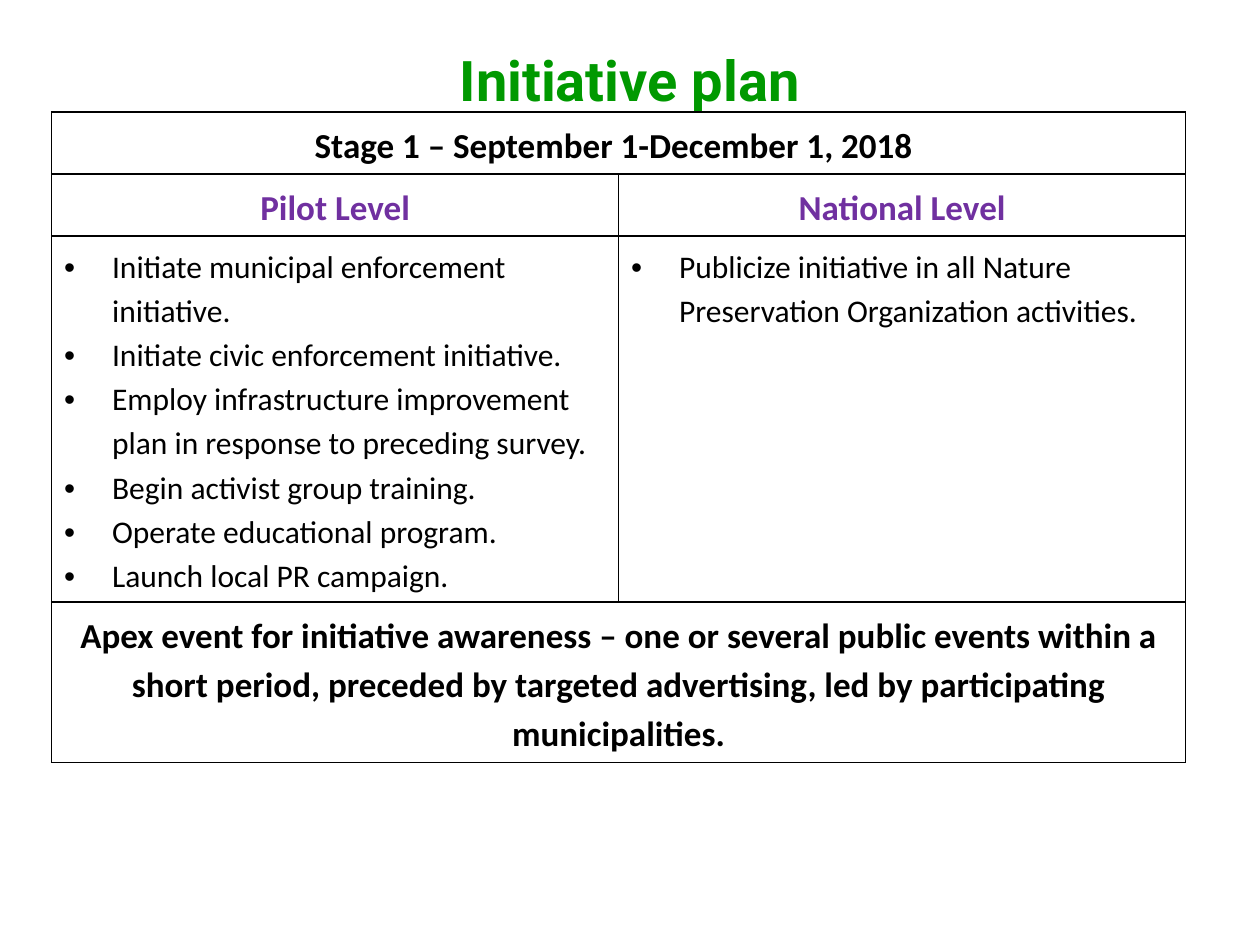
from lxml import etree
from pptx import Presentation
from pptx.dml.color import RGBColor
from pptx.enum import text
from pptx.oxml import ns
from pptx.util import Inches, Pt

COLORS = {"title": "009900", "level": "7030A0", "body": "000000", "border": "000000"}
TITLE = "Initiative plan"
STAGE = " Stage 1 – September 1-December 1, 2018"
LEVELS = ["Pilot Level", "National Level"]
ACTIONS = [
    [
        "Initiate municipal enforcement initiative.",
        "Initiate civic enforcement initiative.",
        "Employ infrastructure improvement plan in response to preceding survey.",
        "Begin activist group training.",
        "Operate educational program.",
        "Launch local PR campaign.",
    ],
    ["Publicize initiative in all Nature Preservation Organization activities."],
]
APEX = (
    "Apex event for initiative awareness – one or several public events within a "
    "short period, preceded by targeted advertising, led by participating municipalities."
)
ROW_HEIGHTS = [0.49, 0.49, 2.9, 1.27]
COLUMN_WIDTH = 4.5
INDENT = 0.38


def add_child(parent, tag, **attributes):
    child = etree.SubElement(parent, ns.qn(tag))
    for name, value in attributes.items():
        child.set(name, str(value))
    return child


def write(frame, lines, size=20, font="Calibri", color="body", bold=True,
          bullet=False, rtl=False, spacing=1.15):
    for index, line in enumerate(lines):
        para = frame.paragraphs[0] if index == 0 else frame.add_paragraph()
        para.alignment = text.PP_ALIGN.LEFT if bullet else text.PP_ALIGN.CENTER
        para.line_spacing = spacing
        properties = para._p.get_or_add_pPr()
        if rtl:
            properties.set("rtl", "1")
        if bullet:
            properties.set("marL", str(Inches(INDENT)))
            properties.set("indent", str(-Inches(INDENT)))
            add_child(properties, "a:buFont", typeface="Arial")
            add_child(properties, "a:buChar", char="•")
        span = para.add_run()
        span.text = line
        span.font.size = Pt(size)
        span.font.name = font
        span.font.bold = bold
        span.font.color.rgb = RGBColor.from_string(COLORS[color])


def style_cell(cell):
    properties = cell._tc.get_or_add_tcPr()
    for side in ("L", "R", "T", "B"):
        line = add_child(properties, f"a:ln{side}", w=Pt(1))
        fill = add_child(line, "a:solidFill")
        add_child(fill, "a:srgbClr", val=COLORS["border"])
    cell.fill.background()


deck = Presentation()
deck.slide_width, deck.slide_height = Inches(10), Inches(7.5)
page = deck.slides.add_slide(deck.slide_layouts[5])

title = page.shapes.title
title.left, title.top, title.width, title.height = map(Inches, (0.5, 0, 9, 1.25))
title.text_frame.vertical_anchor = text.MSO_ANCHOR.MIDDLE
write(title.text_frame, [TITLE], size=32, font="Roboto", color="title", rtl=True, spacing=1.0)

table = page.shapes.add_table(
    len(ROW_HEIGHTS), len(LEVELS), Inches(0.41), Inches(0.89),
    Inches(COLUMN_WIDTH * len(LEVELS)), Inches(sum(ROW_HEIGHTS)),
).table
table.first_row = False
table.horz_banding = False
for row, height in zip(table.rows, ROW_HEIGHTS):
    row.height = Inches(height)
for column in table.columns:
    column.width = Inches(COLUMN_WIDTH)
for cell in table.iter_cells():
    style_cell(cell)
for row in (0, 3):
    table.cell(row, 0).merge(table.cell(row, 1))

write(table.cell(0, 0).text_frame, [STAGE], rtl=True)
for column, (level, actions) in enumerate(zip(LEVELS, ACTIONS)):
    write(table.cell(1, column).text_frame, [level], color="level", rtl=True)
    write(table.cell(2, column).text_frame, actions, size=18, bold=False, bullet=True)
write(table.cell(3, 0).text_frame, [APEX])

deck.save("out.pptx")
